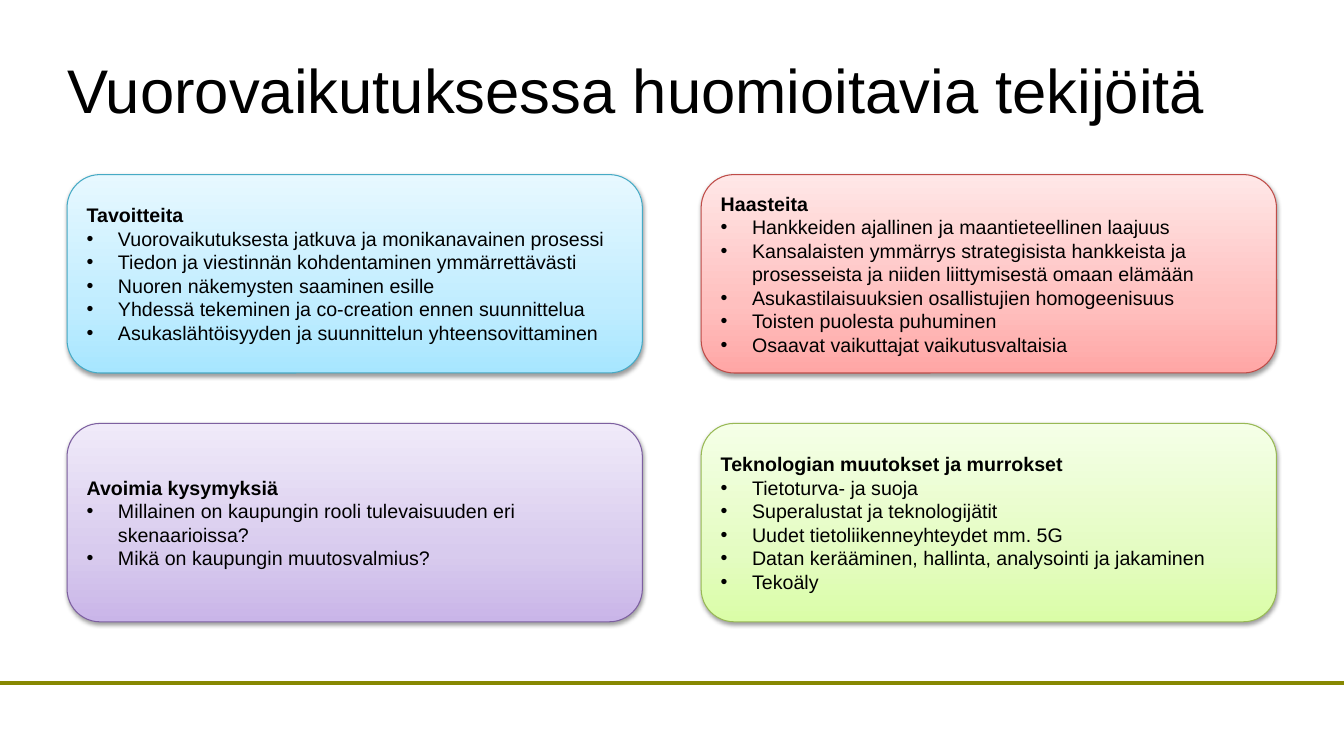
from dataclasses import dataclass

from lxml import etree
from pptx import Presentation
from pptx.dml.color import RGBColor
from pptx.enum.shapes import MSO_CONNECTOR, MSO_SHAPE
from pptx.enum.text import MSO_ANCHOR, MSO_AUTO_SIZE, PP_ALIGN
from pptx.oxml import parse_xml
from pptx.oxml.ns import qn
from pptx.slide import Slide
from pptx.text.text import _Paragraph
from pptx.util import Cm, Pt

ROUNDED = MSO_SHAPE.ROUNDED_RECTANGLE
STRAIGHT = MSO_CONNECTOR.STRAIGHT
MIDDLE = MSO_ANCHOR.MIDDLE
LEFT = PP_ALIGN.LEFT
FIXED_SIZE = MSO_AUTO_SIZE.NONE
GROW_TO_TEXT = MSO_AUTO_SIZE.SHAPE_TO_FIT_TEXT

FONT = "Arial"
BLACK = "000000"
SLIDE_WIDTH, SLIDE_HEIGHT = 33.87, 19.05
MARGIN, CONTENT_WIDTH = 1.69, 30.48
CARD_WIDTH, CARD_HEIGHT = 14.5, 5.0
CARDS_TOP, ROW_PITCH = 4.4, 6.27
COLUMN_PITCH = CONTENT_WIDTH - CARD_WIDTH
BULLET_INDENT = 0.79
FOOTER_RULE_Y = 17.2
GRADIENT_POSITIONS = (0, 0.35, 1)

DRAWING_NS = "http://schemas.openxmlformats.org/drawingml/2006/main"
CARD_SHADOW = (
    f'<a:outerShdw xmlns:a="{DRAWING_NS}" blurRad="40000" dist="20000" '
    'dir="5400000" rotWithShape="0"><a:srgbClr val="000000">'
    '<a:alpha val="38000"/></a:srgbClr></a:outerShdw>'
)


@dataclass(frozen=True)
class Card:
    column: int
    row: int
    heading: str
    points: tuple[str, ...]
    gradient: tuple[str, str, str]
    border: str


CARDS = (
    Card(0, 0, "Tavoitteita", (
        "Vuorovaikutuksesta jatkuva ja monikanavainen prosessi",
        "Tiedon ja viestinnän kohdentaminen ymmärrettävästi",
        "Nuoren näkemysten saaminen esille",
        "Yhdessä tekeminen ja co-creation ennen suunnittelua",
        "Asukaslähtöisyyden ja suunnittelun yhteensovittaminen",
    ), ("A7E6FF", "C1EDFF", "E7F8FF"), "46AAC5"),
    Card(1, 0, "Haasteita", (
        "Hankkeiden ajallinen ja maantieteellinen laajuus",
        "Kansalaisten ymmärrys strategisista hankkeista ja prosesseista "
        "ja niiden liittymisestä omaan elämään",
        "Asukastilaisuuksien osallistujien homogeenisuus",
        "Toisten puolesta puhuminen",
        "Osaavat vaikuttajat vaikutusvaltaisia",
    ), ("FFA6A5", "FFC0BF", "FFE7E7"), "BF4C48"),
    Card(0, 1, "Avoimia kysymyksiä", (
        "Millainen on kaupungin rooli tulevaisuuden eri skenaarioissa?",
        "Mikä on kaupungin muutosvalmius?",
    ), ("C9B5E8", "D8CBEE", "F0EAF9"), "7D60A0"),
    Card(1, 1, "Teknologian muutokset ja murrokset", (
        "Tietoturva- ja suoja",
        "Superalustat ja teknologijätit",
        "Uudet tietoliikenneyhteydet mm. 5G",
        "Datan kerääminen, hallinta, analysointi ja jakaminen",
        "Tekoäly",
    ), ("DAFDA7", "E4FCC2", "F5FFE7"), "98B955"),
)


def rgb(color: str) -> RGBColor:
    return RGBColor.from_string(color)


def add_text(paragraph: _Paragraph, text: str, size: float, bold: bool = False) -> None:
    paragraph.alignment = LEFT
    run = paragraph.add_run()
    run.text = text
    run.font.name = FONT
    run.font.size = Pt(size)
    run.font.bold = bold
    run.font.color.rgb = rgb(BLACK)


def add_bullet(paragraph: _Paragraph) -> None:
    properties = paragraph._p.get_or_add_pPr()
    properties.set("marL", str(Cm(BULLET_INDENT)))
    properties.set("indent", str(-Cm(BULLET_INDENT)))
    etree.SubElement(properties, qn("a:buFont"), typeface=FONT)
    etree.SubElement(properties, qn("a:buChar"), char="•")


def write_title(slide: Slide, text: str) -> None:
    title = slide.shapes.title
    title.left, title.top = Cm(MARGIN), Cm(0.76)
    title.width, title.height = Cm(CONTENT_WIDTH), Cm(3.18)
    frame = title.text_frame
    frame.margin_left = frame.margin_right = 0
    frame.margin_top = frame.margin_bottom = 0
    frame.vertical_anchor = MIDDLE
    frame.word_wrap = True
    frame.auto_size = FIXED_SIZE
    heading = frame.paragraphs[0]
    heading.line_spacing = 0.9
    add_text(heading, text, 44)


def draw_footer_rule(slide: Slide) -> None:
    rule = slide.shapes.add_connector(
        STRAIGHT, 0, Cm(FOOTER_RULE_Y), Cm(SLIDE_WIDTH), Cm(FOOTER_RULE_Y))
    rule.line.color.rgb = rgb("878802")
    rule.line.width = Pt(2.83)
    etree.SubElement(rule._element.spPr, qn("a:effectLst"))


def draw_card(slide: Slide, card: Card) -> None:
    box = slide.shapes.add_shape(
        ROUNDED,
        Cm(MARGIN + card.column * COLUMN_PITCH),
        Cm(CARDS_TOP + card.row * ROW_PITCH),
        Cm(CARD_WIDTH), Cm(CARD_HEIGHT))
    properties = box._element.spPr

    box.fill.gradient()
    box.fill.gradient_angle = 90
    stop_list = properties.find(".//" + qn("a:gsLst"))
    etree.SubElement(stop_list, qn("a:gs"), pos="0")
    stops = zip(box.fill.gradient_stops, GRADIENT_POSITIONS, card.gradient)
    for stop, position, color in stops:
        stop.position = position
        stop.color.rgb = rgb(color)

    box.line.color.rgb = rgb(card.border)
    box.line.width = Pt(0.75)
    box.shadow.inherit = False
    properties.find(qn("a:effectLst")).append(parse_xml(CARD_SHADOW))

    frame = box.text_frame
    frame.word_wrap = True
    frame.auto_size = GROW_TO_TEXT
    frame.vertical_anchor = MIDDLE
    add_text(frame.paragraphs[0], card.heading, 14, bold=True)
    for point in card.points:
        paragraph = frame.add_paragraph()
        add_bullet(paragraph)
        add_text(paragraph, point, 14)


def main() -> None:
    presentation = Presentation()
    presentation.slide_width = Cm(SLIDE_WIDTH)
    presentation.slide_height = Cm(SLIDE_HEIGHT)
    title_only = presentation.slide_layouts.get_by_name("Title Only")
    slide = presentation.slides.add_slide(title_only)
    draw_footer_rule(slide)
    write_title(slide, "Vuorovaikutuksessa huomioitavia tekijöitä")
    for card in CARDS:
        draw_card(slide, card)
    presentation.save("out.pptx")


if __name__ == "__main__":
    main()
